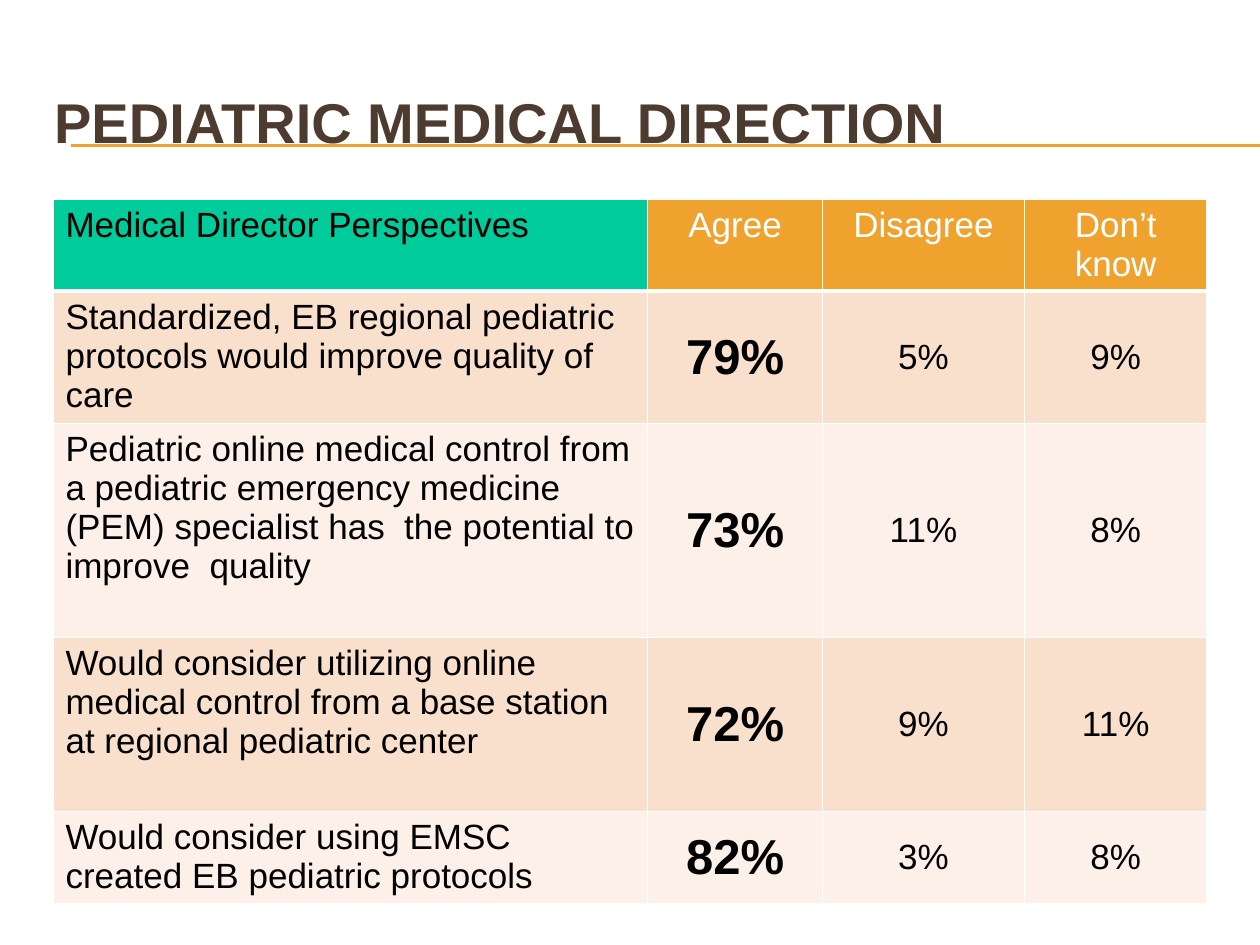
from lxml import etree
from pptx import Presentation
from pptx.dml.color import RGBColor
from pptx.enum.shapes import MSO_CONNECTOR
from pptx.enum.text import MSO_ANCHOR, PP_ALIGN
from pptx.oxml.ns import qn
from pptx.util import Inches, Pt

STRAIGHT = MSO_CONNECTOR.STRAIGHT
TOP, MIDDLE = MSO_ANCHOR.TOP, MSO_ANCHOR.MIDDLE
LEFT, CENTER = PP_ALIGN.LEFT, PP_ALIGN.CENTER
TITLE_ONLY = 5

BROWN, ORANGE, GREEN = "4E3B30", "F0A22E", "00CC9B"
BLACK, WHITE = "000000", "FFFFFF"
BANDS = ("F9E0CD", "FCF0E8")

COLUMN_WIDTHS = (4.72, 1.39, 1.6, 1.45)
ROW_HEIGHTS = (0.73, 1.05, 1.7, 1.38, 0.73)
ROWS = (
    ("Medical Director Perspectives", "Agree", "Disagree", "Don’t know"),
    ("Standardized, EB regional pediatric protocols would improve quality of care",
     "79%", "5%", "9%"),
    ("Pediatric online medical control from a pediatric emergency medicine (PEM) "
     "specialist has  the potential to improve  quality", "73%", "11%", "8%"),
    ("Would consider utilizing online medical control from a base station "
     "at regional pediatric center", "72%", "9%", "11%"),
    ("Would consider using EMSC created EB pediatric protocols", "82%", "3%", "8%"),
)


def color(value):
    return RGBColor.from_string(value)


class SlideBuilder:
    """Holds the text style and the current slide."""

    font_name = "Arial"

    def __init__(self, slide):
        self.slide = slide

    def style(self, paragraph, size, font_color, bold=False, align=LEFT):
        paragraph.alignment = align
        font = paragraph.font
        font.name, font.size, font.bold = self.font_name, Pt(size), bold
        font.color.rgb = color(font_color)

    def title(self, text, left, top, width, height):
        title = self.slide.shapes.title
        title.left, title.top = Inches(left), Inches(top)
        title.width, title.height = Inches(width), Inches(height)
        title.text_frame.text = text
        title.text_frame.vertical_anchor = MIDDLE
        self.style(title.text_frame.paragraphs[0], 32, BROWN, bold=True)

    def rule(self, left, right, y):
        """Draw a horizontal line behind the title."""
        line = self.slide.shapes.add_connector(
            STRAIGHT, Inches(left), Inches(y), Inches(right), Inches(y))
        line.line.color.rgb = color(ORANGE)
        line.line.width = Pt(0.75)
        etree.SubElement(line._element.spPr, qn("a:effectLst"))
        self.slide.shapes.title._element.addprevious(line._element)

    def borders(self, cell, top=1, bottom=1):
        properties = cell._tc.get_or_add_tcPr()
        widths = {"a:lnL": 1, "a:lnR": 1, "a:lnT": top, "a:lnB": bottom}
        for index, (tag, width) in enumerate(widths.items()):
            border = etree.Element(qn(tag), w=str(Pt(width)))
            fill = etree.SubElement(border, qn("a:solidFill"))
            etree.SubElement(fill, qn("a:srgbClr"), val=WHITE)
            properties.insert(index, border)

    def cell(self, cell, text, row, column):
        header, label, agree = row == 0, column == 0, column == 1
        cell.text = text
        cell.vertical_anchor = TOP if header or label else MIDDLE
        highlight = agree and not header
        self.style(cell.text_frame.paragraphs[0],
                   size=28 if highlight else 20,
                   font_color=WHITE if header and not label else BLACK,
                   bold=highlight,
                   align=LEFT if label else CENTER)
        if header:
            fill_color = GREEN if label else ORANGE
        else:
            fill_color = BANDS[(row - 1) % 2]
        cell.fill.solid()
        cell.fill.fore_color.rgb = color(fill_color)
        self.borders(cell, top=3 if row == 1 else 1, bottom=3 if header else 1)

    def table(self, rows, left, top, widths, heights):
        table = self.slide.shapes.add_table(
            len(rows), len(widths), Inches(left), Inches(top),
            Inches(sum(widths)), Inches(sum(heights))).table
        for column, width in zip(table.columns, widths):
            column.width = Inches(width)
        for row, height in zip(table.rows, heights):
            row.height = Inches(height)
        for row, texts in enumerate(rows):
            for column, text in enumerate(texts):
                self.cell(table.cell(row, column), text, row, column)


def main():
    presentation = Presentation()
    presentation.slide_width, presentation.slide_height = Inches(10), Inches(7.5)
    layout = presentation.slide_layouts[TITLE_ONLY]
    builder = SlideBuilder(presentation.slides.add_slide(layout))

    # Title with a double rule behind it
    builder.title("PEDIATRIC MEDICAL DIRECTION", 0.33, 0.5, 9.5, 0.92)
    for y in (1.15, 1.16):
        builder.rule(0.56, 10, y)

    # Survey results
    builder.table(ROWS, 0.42, 1.58, COLUMN_WIDTHS, ROW_HEIGHTS)

    presentation.save("out.pptx")


if __name__ == "__main__":
    main()
